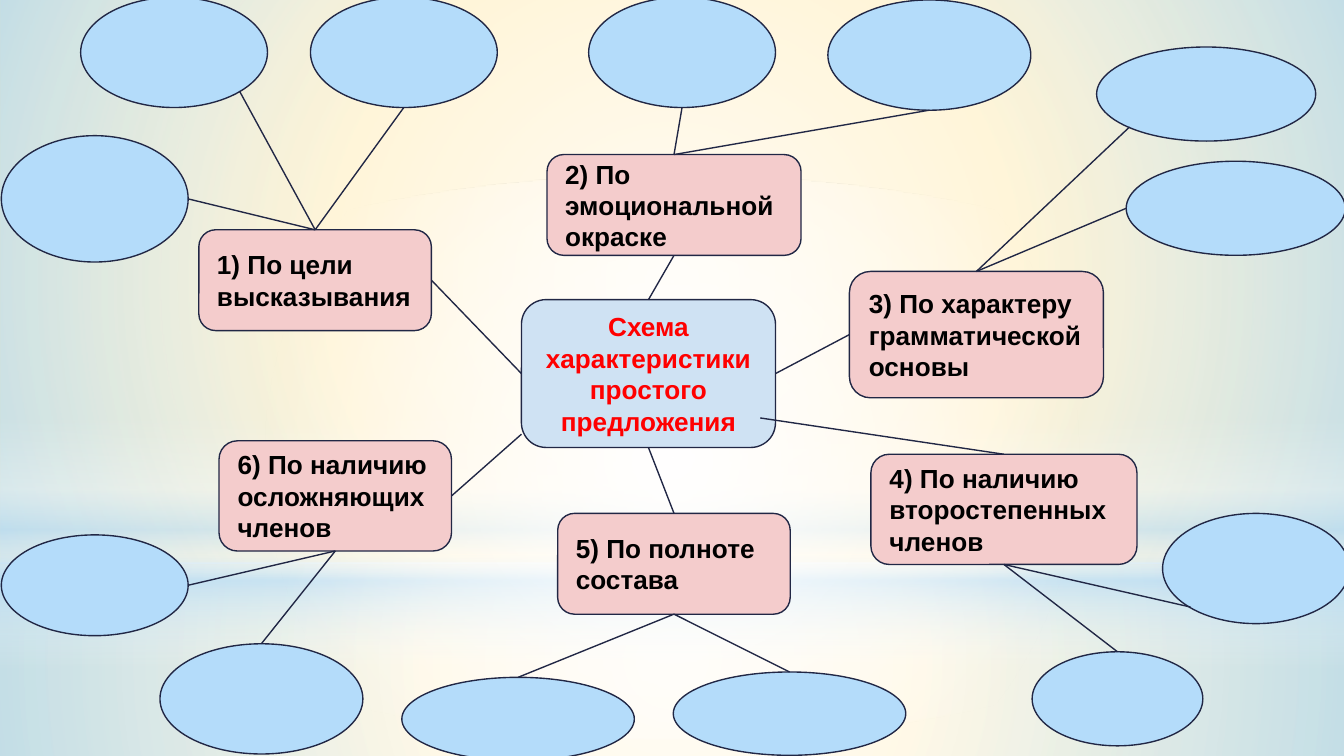
"""Builds a mind map of the features of a simple sentence."""
from lxml import etree
from pptx import Presentation
from pptx.dml.color import RGBColor
from pptx.enum.shapes import MSO_CONNECTOR, MSO_SHAPE
from pptx.enum.text import MSO_ANCHOR, PP_ALIGN
from pptx.oxml.ns import qn
from pptx.util import Inches, Pt

RECTANGLE, ROUNDED, OVAL = MSO_SHAPE.RECTANGLE, MSO_SHAPE.ROUNDED_RECTANGLE, MSO_SHAPE.OVAL
STRAIGHT = MSO_CONNECTOR.STRAIGHT
LEFT, CENTER, MIDDLE = PP_ALIGN.LEFT, PP_ALIGN.CENTER, MSO_ANCHOR.MIDDLE

THEME = {
    "font": "Arial", "size": 14, "line_width": 0.75, "inset": 0.1,
    "page": "FFE599", "line": "212745", "text": "000000", "accent": "FF0000",
    "hub": "CFE2F3", "branch": "F4CCCC", "leaf": "B4DCFA", "white": "FFFFFF",
}

ANCHORS = {
    "top": (0.5, 0), "bottom": (0.5, 1), "left": (0, 0.5), "right": (1, 0.5),
    "lower left": (0.15, 0.85), "lower right": (0.85, 0.85),
    "hub lower right": (0.94, 0.8), "hub lower left": (0, 0.91),
}

BACKDROP = [
    (RECTANGLE, (0, 4.19, 10, 1.44), "radial",
     [(0, "white", 91), (37, "white", 76), (100, "leaf", 79)]),
    (RECTANGLE, (0, 0, 10, 4.19), "radial",
     [(0, "white", 89), (48, "white", 62), (100, "leaf", 79)]),
    (RECTANGLE, (0, 3.09, 10, 1.88), "vertical",
     [(0, "white", 0), (29, "white", 30), (45, "leaf", 40),
      (55, "white", 26), (65, "leaf", 60), (100, "white", 0)]),
    (OVAL, (0, 1.31, 10, 4.19), "radial", [(0, "white", 100), (56, "white", 0)]),
]

HUB = ("Схема характеристики простого предложения", (3.88, 2.23, 1.89, 1.1))

BRANCHES = [
    {"text": "1) По цели высказывания", "frame": (1.48, 1.71, 1.73, 0.75),
     "hub_link": ("left", "right"), "leaf_side": "top",
     "leaves": [((0.01, 1.01, 1.39, 0.94), "right"),
                ((0.6, -0.02, 1.39, 0.82), "lower right"),
                ((2.31, -0.02, 1.39, 0.82), "bottom")]},
    {"text": "2) По эмоциональной окраске", "frame": (4.07, 1.15, 1.89, 0.75),
     "hub_link": ("top", "bottom"), "leaf_side": "top",
     "leaves": [((4.38, -0.02, 1.39, 0.82), "bottom"),
                ((6.16, 0, 1.51, 0.82), "bottom")]},
    {"text": "3) По характеру грамматической основы", "frame": (6.32, 2.02, 1.89, 0.94),
     "hub_link": ("right", "left"), "leaf_side": "top",
     "leaves": [((8.16, 0.35, 1.63, 0.7), "lower left"),
                ((8.38, 1.2, 1.63, 0.7), "left")]},
    {"text": "4) По наличию второстепенных членов", "frame": (6.48, 3.38, 1.98, 0.82),
     "hub_link": ("hub lower right", "top"), "leaf_side": "bottom",
     "leaves": [((8.65, 3.82, 1.39, 0.82), "lower left"),
                ((7.68, 4.85, 1.27, 0.7), "top")]},
    {"text": "5) По полноте состава", "frame": (4.15, 3.82, 1.73, 0.75),
     "hub_link": ("bottom", "top"), "leaf_side": "bottom",
     "leaves": [((2.99, 5.04, 1.73, 0.62), "top"),
                ((5.01, 5, 1.73, 0.62), "top")]},
    {"text": "6) По наличию осложняющих членов", "frame": (1.63, 3.28, 1.73, 0.82),
     "hub_link": ("hub lower left", "right"), "leaf_side": "bottom",
     "leaves": [((0.01, 3.98, 1.39, 0.75), "right"),
                ((1.19, 4.79, 1.51, 0.82), "top")]},
]


def color(name):
    return RGBColor.from_string(THEME[name])


def add_child(parent, tag, **attributes):
    return etree.SubElement(parent, qn(tag), {key: str(value) for key, value in attributes.items()})


def add_backdrop(page, kind, frame, direction, stops):
    """Adds a translucent gradient shape and moves it to the layout."""
    shape = page.shapes.add_shape(kind, *map(Inches, frame))
    shape.shadow.inherit = False
    shape.line.fill.background()
    gradient = etree.Element(qn("a:gradFill"), rotWithShape="1")
    stop_list = add_child(gradient, "a:gsLst")
    for position, name, opacity in stops:
        stop = add_child(stop_list, "a:gs", pos=position * 1000)
        tint = add_child(stop, "a:srgbClr", val=THEME[name])
        add_child(tint, "a:alpha", val=opacity * 1000)
    if direction == "radial":
        circle = add_child(gradient, "a:path", path="circle")
        add_child(circle, "a:fillToRect", l=50000, t=50000, r=50000, b=50000)
    else:
        add_child(gradient, "a:lin", ang=5400000, scaled=0)
    shape.element.spPr.find(qn("a:prstGeom")).addnext(gradient)
    page.slide_layout.shapes.element.append(shape.element)


def add_node(page, kind, frame, fill, text="", text_color="text", align=LEFT):
    shape = page.shapes.add_shape(kind, *map(Inches, frame))
    shape.shadow.inherit = False
    shape.fill.solid()
    shape.fill.fore_color.rgb = color(fill)
    shape.line.color.rgb = color("line")
    shape.line.width = Pt(THEME["line_width"])
    if not text:
        return
    box = shape.text_frame
    box.word_wrap = True
    box.vertical_anchor = MIDDLE
    box.margin_left = box.margin_right = Inches(THEME["inset"])
    box.margin_top = box.margin_bottom = Inches(THEME["inset"])
    box.text = text
    para = box.paragraphs[0]
    para.alignment = align
    font = para.runs[0].font
    font.name, font.size, font.bold = THEME["font"], Pt(THEME["size"]), True
    font.color.rgb = color(text_color)


def anchor_point(frame, anchor):
    left, top, width, height = frame
    across, down = ANCHORS[anchor]
    return Inches(left + width * across), Inches(top + height * down)


def add_link(page, start, end):
    link = page.shapes.add_connector(STRAIGHT, *anchor_point(*start), *anchor_point(*end))
    link.line.color.rgb = color("line")
    link.line.width = Pt(THEME["line_width"])
    add_child(link.element.spPr, "a:effectLst")


def main():
    deck = Presentation()
    deck.slide_width = Inches(10)
    deck.slide_height = deck.slide_width * 9 // 16
    page = deck.slides.add_slide(deck.slide_layouts[6])
    page.background.fill.solid()
    page.background.fill.fore_color.rgb = color("page")
    for layer in BACKDROP:
        add_backdrop(page, *layer)

    hub_text, hub_frame = HUB
    add_node(page, ROUNDED, hub_frame, "hub", hub_text, "accent", CENTER)
    for branch in BRANCHES:
        add_node(page, ROUNDED, branch["frame"], "branch", branch["text"])
    for branch in BRANCHES:
        for frame, _ in branch["leaves"]:
            add_node(page, OVAL, frame, "leaf")
    for branch in BRANCHES:
        hub_side, branch_side = branch["hub_link"]
        add_link(page, (hub_frame, hub_side), (branch["frame"], branch_side))
        for leaf in branch["leaves"]:
            add_link(page, (branch["frame"], branch["leaf_side"]), leaf)
    deck.save("out.pptx")


if __name__ == "__main__":
    main()
